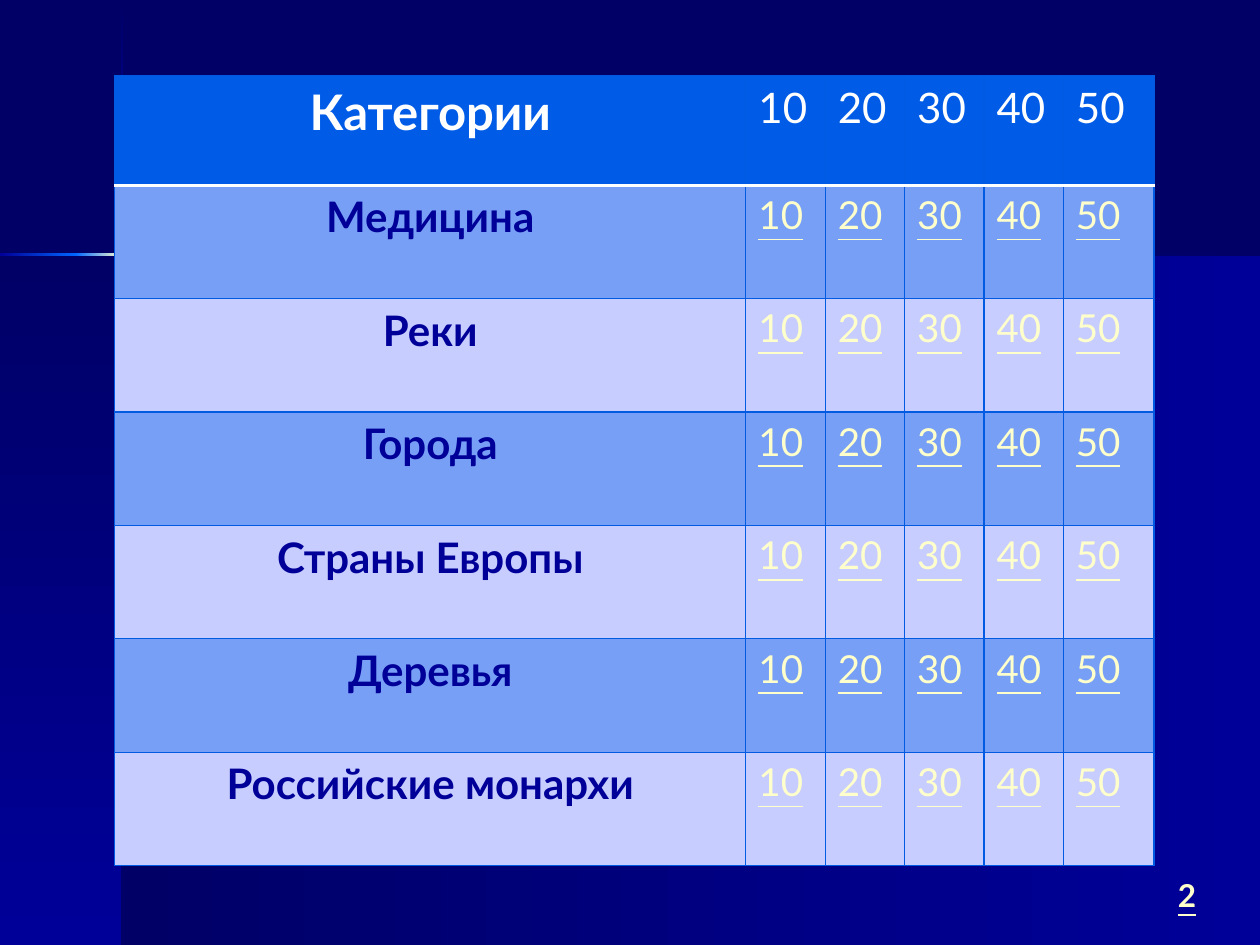
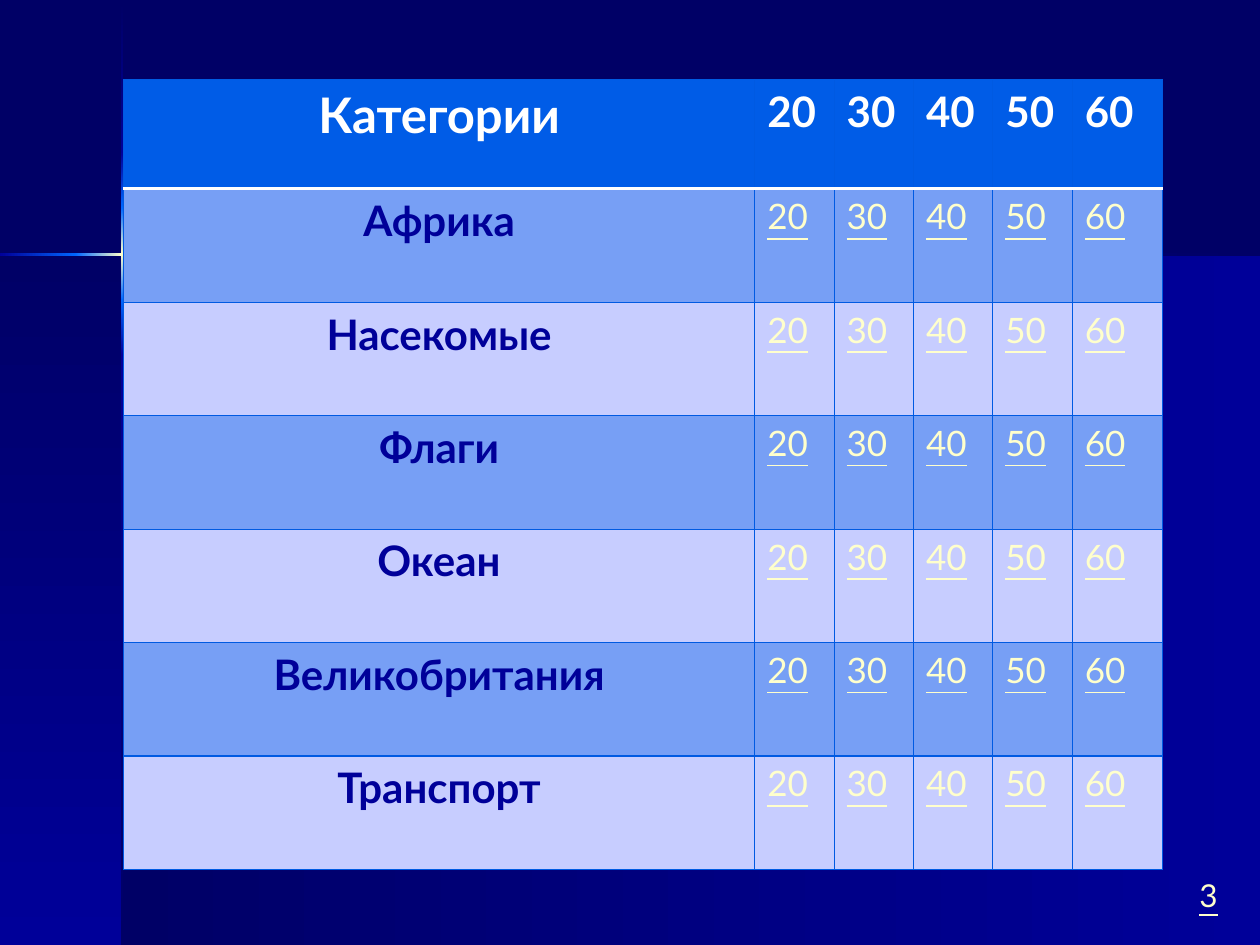
"""Builds two quiz boards with categories and point values on a shared blue background."""
from pptx import Presentation
from pptx.dml.color import RGBColor
from pptx.enum.shapes import MSO_SHAPE as Preset
from pptx.enum.text import MSO_AUTO_SIZE as AutoSize, PP_ALIGN as Align
from pptx.oxml import parse_xml
from pptx.oxml.ns import nsdecls
from pptx.util import Inches, Pt

FONT = "Lato"
NIGHT, NAVY, BRIGHT, CREAM = "000066", "000099", "0066FF", "FFFFCC"
HEADER, BORDER, WHITE = "005CE7", "005AE2", "FFFFFF"
ROW_FILLS = ["779FF5", "C7CDFF"]
COLUMN_WIDTHS = [5.01, 0.63, 0.63, 0.63, 0.63, 0.72]
HEADER_HEIGHT, ROW_HEIGHT = 0.87, 0.9
TABLE_SIZE = Inches(8.25), Inches(6.27)

GLOW = [BRIGHT, CREAM, BRIGHT]
BANDS = [
    (0.97, 2.02, 9.03, 5.48, [NIGHT, NAVY], 0),
    (0, 2.02, 0.97, 5.48, [NIGHT, NAVY], 90),
    (0.96, 0.01, 0.02, 1.2, [NIGHT, NAVY], 90),
    (0.96, 2.82, 0.02, 4.68, [NAVY, NIGHT], 90),
    (1.77, 2.01, 8.23, 0.02, [NAVY, NIGHT], 0),
    (0.96, 2.38, 0.02, 0.44, [BRIGHT, NAVY], 90),
    (0.96, 1.21, 0.02, 0.44, [NAVY, BRIGHT], 90),
    (0.96, 1.65, 0.02, 0.73, GLOW, 90),
    (0, 2.01, 0.61, 0.02, [NAVY, BRIGHT], 0),
    (1.33, 2.01, 0.44, 0.02, [BRIGHT, NAVY], 0),
    (0.6, 2.01, 0.73, 0.02, GLOW, 0),
]

BOARDS = [
    dict(at=(0.91, 0.6), points=range(10, 60, 10), header_bold=False, link_size=22,
         number="2", number_at=(9.25, 6.9), number_bold=True,
         categories=["Медицина", "Реки", "Города", "Страны Европы", "Деревья",
                     "Российские монархи"]),
    dict(at=(0.98, 0.63), points=range(20, 70, 10), header_bold=True, link_size=20,
         number="3", number_at=(9.42, 6.9), number_bold=False,
         categories=["Африка", "Насекомые", "Флаги", "Океан", "Великобритания",
                     "Транспорт"]),
]


def color(value):
    return RGBColor.from_string(value)


def write(frame, text, size, ink, bold=False, underline=False, align=Align.LEFT):
    para = frame.paragraphs[0]
    para.alignment = align
    span = para.add_run()
    span.text = text
    font = span.font
    font.name, font.size, font.bold = FONT, Pt(size), bold
    font.underline = underline
    font.color.rgb = color(ink)


deck = Presentation()
deck.slide_width, deck.slide_height = Inches(10), Inches(7.5)
layout = deck.slide_layouts[6]
layout.background.fill.solid()
layout.background.fill.fore_color.rgb = color(NIGHT)
pages = [deck.slides.add_slide(layout) for _ in BOARDS]

for left, top, width, height, stops, angle in BANDS:
    band = pages[0].shapes.add_shape(Preset.RECTANGLE, Inches(left), Inches(top),
                                     Inches(width), Inches(height))
    stop_xml = "".join(
        f'<a:gs pos="{100000 * i // (len(stops) - 1)}"><a:srgbClr val="{stop}"/></a:gs>'
        for i, stop in enumerate(stops))
    band.element.spPr.append(parse_xml(
        f'<a:gradFill {nsdecls("a")} rotWithShape="1"><a:gsLst>{stop_xml}</a:gsLst>'
        f'<a:lin ang="{angle * 60000}" scaled="0"/></a:gradFill>'))
    band.line.fill.background()
    band.shadow.inherit = False
    layout.shapes.element.append(band.element)

for page, board in zip(pages, BOARDS):
    points = [str(value) for value in board["points"]]
    rows = [[name, *points] for name in ["Категории", *board["categories"]]]
    left, top = board["at"]
    table = page.shapes.add_table(len(rows), len(COLUMN_WIDTHS), Inches(left), Inches(top),
                                  *TABLE_SIZE).table
    for column, width in zip(table.columns, COLUMN_WIDTHS):
        column.width = Inches(width)

    for r, texts in enumerate(rows):
        table.rows[r].height = Inches(ROW_HEIGHT if r else HEADER_HEIGHT)
        for c, text in enumerate(texts):
            cell = table.cell(r, c)
            properties = cell._tc.get_or_add_tcPr()
            for side in "LRTB":
                divider = (r, side) in [(0, "B"), (1, "T")]
                line, points_wide = (WHITE, 2) if divider else (BORDER, 0.75)
                properties.append(parse_xml(
                    f'<a:ln{side} {nsdecls("a")} w="{Pt(points_wide)}"><a:solidFill>'
                    f'<a:srgbClr val="{line}"/></a:solidFill></a:ln{side}>'))
            cell.fill.solid()
            cell.fill.fore_color.rgb = color(ROW_FILLS[(r - 1) % 2] if r else HEADER)

            if c == 0:
                write(cell.text_frame, text, 24 if r else 28, NAVY if r else WHITE,
                      bold=True, align=Align.CENTER)
            elif r == 0:
                write(cell.text_frame, text, 24, WHITE, bold=board["header_bold"])
            else:
                write(cell.text_frame, text, board["link_size"], CREAM, underline=True)

    left, top = board["number_at"]
    box = page.shapes.add_textbox(Inches(left), Inches(top), Inches(0.35), Inches(0.4))
    box.text_frame.word_wrap = False
    box.text_frame.auto_size = AutoSize.SHAPE_TO_FIT_TEXT
    write(box.text_frame, board["number"], 18, CREAM, bold=board["number_bold"],
          underline=True)

deck.save("out.pptx")
